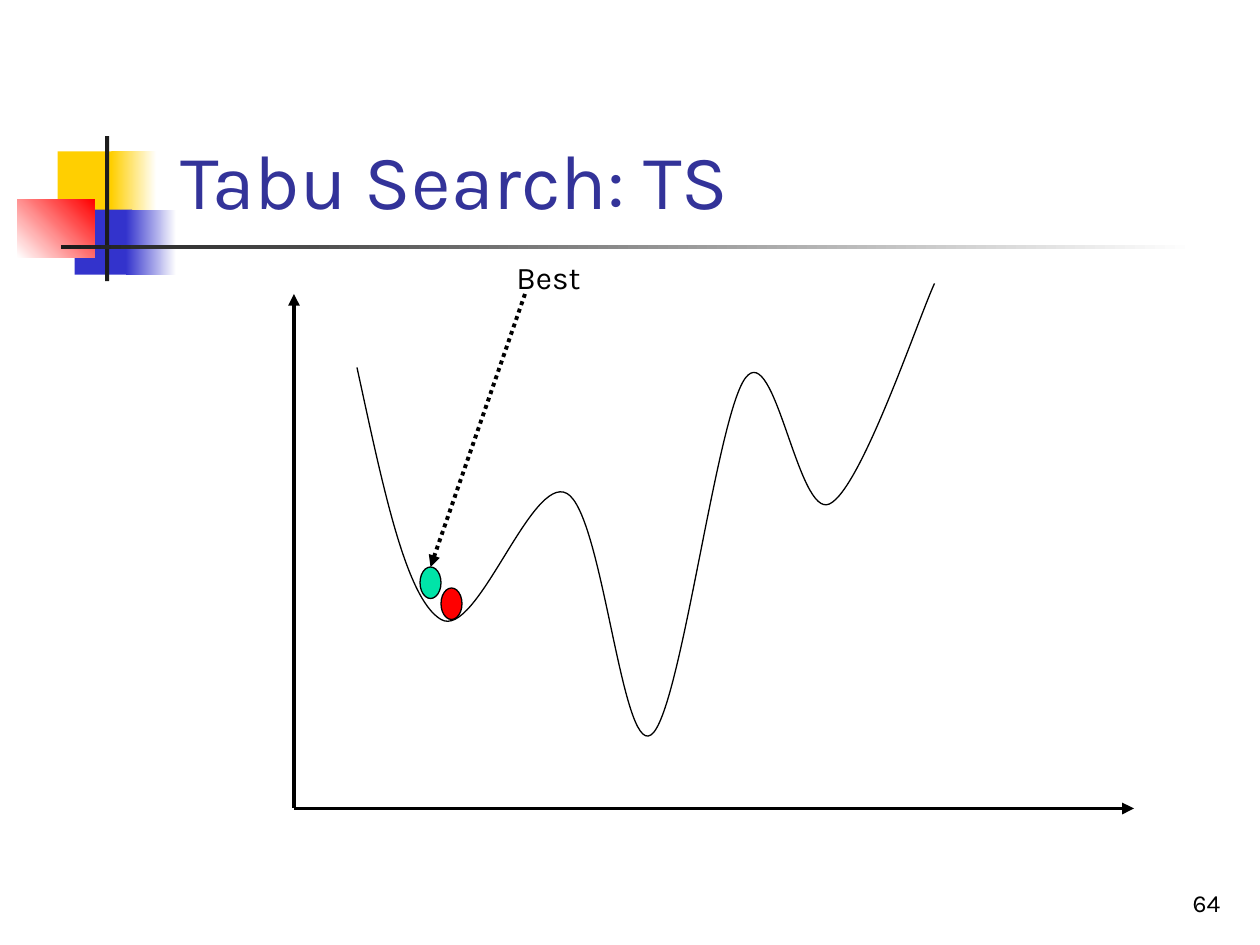
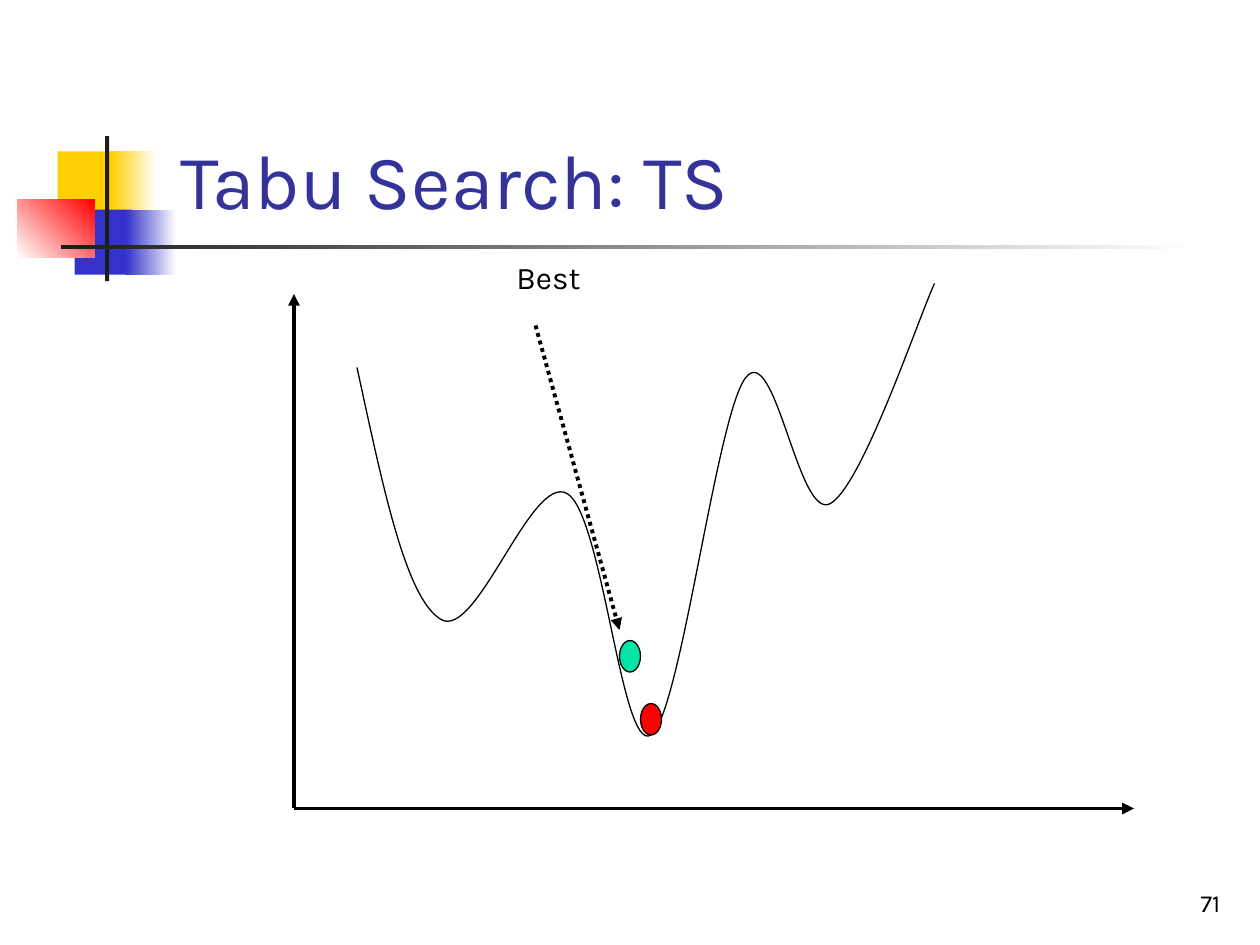
from lxml import etree
from pptx import Presentation
from pptx.dml.color import RGBColor
from pptx.enum.dml import MSO_LINE
from pptx.enum.shapes import MSO_CONNECTOR, MSO_SHAPE
from pptx.enum.text import MSO_ANCHOR, PP_ALIGN
from pptx.oxml.ns import qn
from pptx.util import Inches, Pt

RECTANGLE, OVAL = MSO_SHAPE.RECTANGLE, MSO_SHAPE.OVAL
STRAIGHT = MSO_CONNECTOR.STRAIGHT
DOTTED, SOLID = MSO_LINE.ROUND_DOT, MSO_LINE.SOLID
TOP, BOTTOM = MSO_ANCHOR.TOP, MSO_ANCHOR.BOTTOM
LEFT, RIGHT = PP_ALIGN.LEFT, PP_ALIGN.RIGHT

# The slide is a grid of 120 columns and 90 rows of square cells.
CELL = Inches(10) // 120
FONT = "Karla"
BLACK, WHITE, RED, GREEN = "000000", "FFFFFF", "FF0000", "00E4A8"
YELLOW, BLUE, DARK, TITLE_BLUE = "FFCF01", "3333CC", "1C1C1C", "333399"

# Column, row, width, height, colours (two make a gradient), gradient angle
EMBLEM = [
    (5.5, 14.43, 5.8, 6.2, [YELLOW], 0),
    (10.6, 14.43, 4.3, 6.2, [YELLOW, WHITE], 0),
    (7.1, 19.97, 5.5, 6.2, [BLUE], 0),
    (12, 19.97, 4.8, 6.2, [BLUE, WHITE], 0),
    (1.65, 18.97, 7.35, 5.55, [WHITE, RED], 45),
    (10, 12.97, 0.4, 13.8, [DARK], 0),
    (5.8, 23.35, 108, 0.4, [DARK, WHITE], 0),
]

AXIS_TOP, ORIGIN, AXIS_RIGHT = (28, 28), (28, 77), (108, 77)

# Each Bézier piece: two control points and an end point
CURVE_START = (34, 35)
CURVE = [
    (36.4, 46), (38.6, 57), (42, 59),
    (45.4, 61), (50.6, 45.1), (54, 47),
    (57.4, 48.9), (59.2, 71.9), (62, 70),
    (64.8, 68.2), (68.2, 39.7), (71, 36),
    (73.8, 32.3), (76, 49.4), (79, 48),
    (82, 46.6), (87.4, 30.5), (89, 27),
]

# Page number, current solution, best solution, pointer from and to
STATES = [
    ("64", (42, 56), (40, 54), (50, 28), (41, 54)),
    ("71", (61, 67), (59, 61), (51, 31), (59, 60)),
]


def cells(*values):
    return [round(value * CELL) for value in values]


def color(value):
    return RGBColor.from_string(value)


deck = Presentation()
deck.slide_width, deck.slide_height = cells(120, 90)

for number, current, best, pointer_from, pointer_to in STATES:
    page = deck.slides.add_slide(deck.slide_layouts[6])

    for column, row, width, height, colors, angle in EMBLEM:
        block = page.shapes.add_shape(RECTANGLE, *cells(column, row, width, height))
        block.shadow.inherit = False
        block.line.fill.background()
        if len(colors) == 1:
            block.fill.solid()
            block.fill.fore_color.rgb = color(colors[0])
        else:
            block.fill.gradient()
            block.fill.gradient_angle = angle
            for stop, shade in zip(block.fill.gradient_stops, colors):
                stop.color.rgb = color(shade)

    for text, place, size, shade, anchor, alignment in [
        (number, (92.4, 82, 25, 6), 14, BLACK, BOTTOM, RIGHT),
        ("Tabu Search: TS", (16, 11.25, 102.2, 10.8), 44, TITLE_BLUE, BOTTOM, LEFT),
        ("Best", (48, 24, 14, 4.8), 18, BLACK, TOP, LEFT),
    ]:
        box = page.shapes.add_textbox(*cells(*place))
        box.text_frame.word_wrap = True
        box.text_frame.vertical_anchor = anchor
        para = box.text_frame.paragraphs[0]
        para.text = text
        para.alignment = alignment
        para.font.name = FONT
        para.font.size = Pt(size)
        para.font.color.rgb = color(shade)

    # Lay the points as a polyline, then join every three into one Bézier piece
    builder = page.shapes.build_freeform(*cells(*CURVE_START))
    builder.add_line_segments([cells(*point) for point in CURVE], close=False)
    curve = builder.convert_to_shape()
    segments = list(curve._element.iter(qn("a:lnTo")))
    outline = segments[0].getparent()
    for first in range(0, len(segments), 3):
        piece = etree.SubElement(outline, qn("a:cubicBezTo"))
        for segment in segments[first:first + 3]:
            piece.append(segment[0])
            outline.remove(segment)
    curve.shadow.inherit = False
    curve.fill.background()
    curve.line.color.rgb = color(BLACK)
    curve.line.width = Pt(0.75)

    for begin, end, dash, arrowhead in [
        (AXIS_TOP, ORIGIN, SOLID, "a:headEnd"),
        (ORIGIN, AXIS_RIGHT, SOLID, "a:tailEnd"),
        (pointer_from, pointer_to, DOTTED, "a:tailEnd"),
    ]:
        arrow = page.shapes.add_connector(STRAIGHT, *cells(*begin, *end))
        arrow.line.color.rgb = color(BLACK)
        arrow.line.width = Pt(2.25)
        arrow.line.dash_style = dash
        etree.SubElement(arrow.line._get_or_add_ln(), qn(arrowhead), type="triangle")
        etree.SubElement(arrow._element.spPr, qn("a:effectLst"))

    for place, shade in [(current, RED), (best, GREEN)]:
        ball = page.shapes.add_shape(OVAL, *cells(*place, 2, 3))
        ball.shadow.inherit = False
        ball.fill.solid()
        ball.fill.fore_color.rgb = color(shade)
        ball.line.color.rgb = color(BLACK)
        ball.line.width = Pt(0.75)

deck.save("out.pptx")
